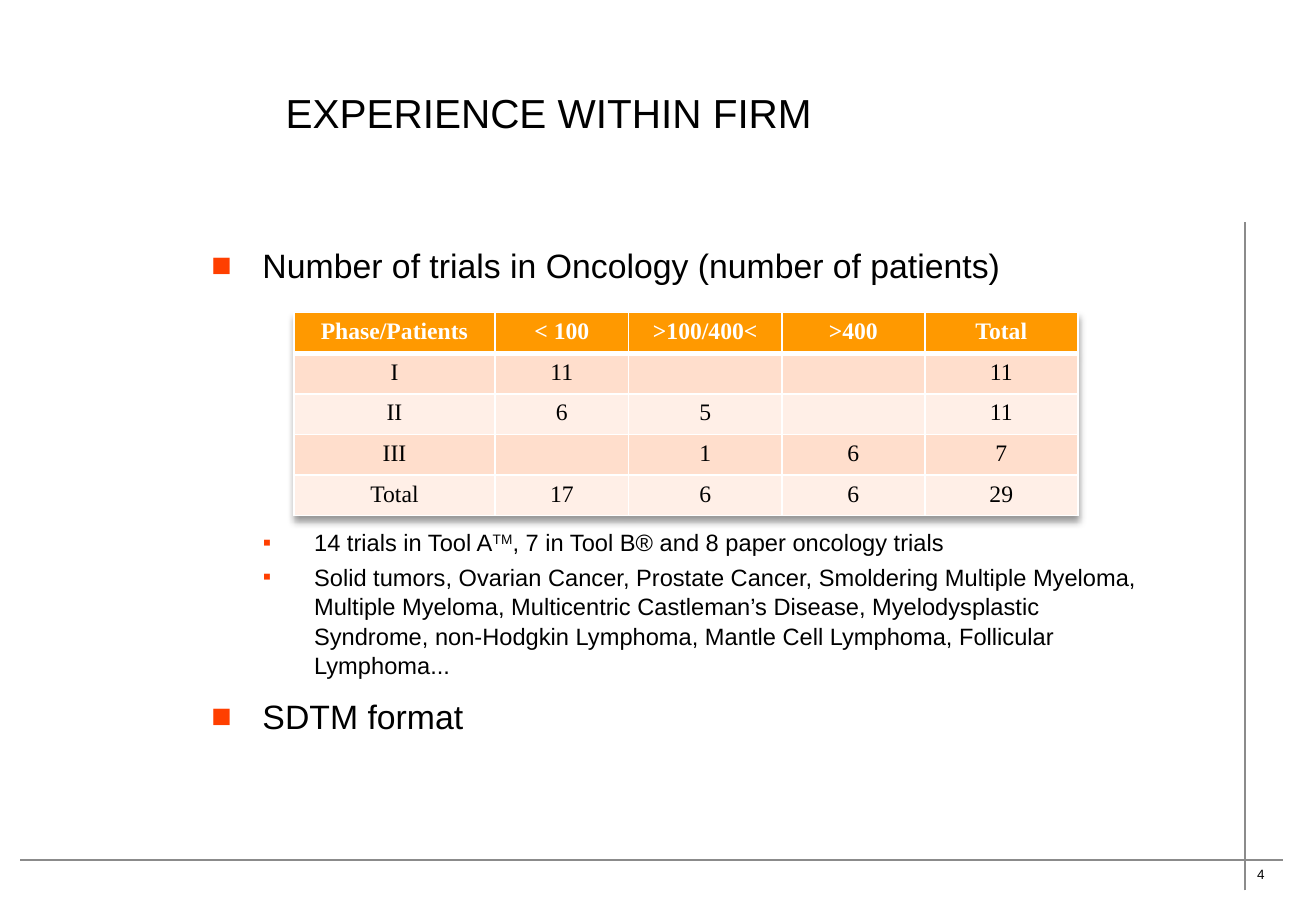
from lxml.etree import SubElement
from pptx import Presentation
from pptx.dml.color import RGBColor
from pptx.enum.shapes import MSO_CONNECTOR
from pptx.enum.text import MSO_ANCHOR, MSO_AUTO_SIZE, PP_ALIGN
from pptx.oxml.ns import qn
from pptx.util import Cm, Pt

COLORS = {
    "text": "000000",
    "white": "FFFFFF",
    "rule": "8B8B8B",
    "bullet": "FF3F00",
    "header": "FF9900",
    "odd": "FFDECC",
    "even": "FFEFE7",
}
LEVELS = [
    {"char": "■", "size": 20, "indent": 1.07, "before": 10, "spacing": 1.0},
    {"char": "▪", "size": 14, "indent": 2.15, "before": 2.8, "spacing": 1.04},
]
HANGING = 1.07
COLUMNS = [4.2, 2.8, 3.2, 2.99, 3.2]
ROW_HEIGHT = 0.8
TRIALS = [
    ["Phase/Patients", "< 100", ">100/400<", ">400", "Total"],
    ["I", "11", "", "", "11"],
    ["II", "6", "5", "", "11"],
    ["III", "", "1", "6", "7"],
    ["Total", "17", "6", "6", "29"],
]
TOPIC = [(0, [("Number of trials in Oncology (number of patients)", False)])]
DETAILS = [
    (1, [("14 trials in Tool A", False), ("TM", True),
         (", 7 in Tool B® and 8 paper oncology trials", False)]),
    (1, [("Solid tumors, Ovarian Cancer, Prostate Cancer, Smoldering Multiple "
          "Myeloma, Multiple Myeloma, Multicentric Castleman’s Disease, "
          "Myelodysplastic Syndrome, non-Hodgkin Lymphoma, Mantle Cell Lymphoma, "
          "Follicular Lymphoma...", False)]),
    (0, [("SDTM format", False)]),
]


def rgb(name):
    return RGBColor.from_string(COLORS[name])


def add_run(p, text, size, color="text", font="Arial", bold=False):
    r = p.add_run()
    r.text = text
    r.font.size = Pt(size)
    r.font.name = font
    r.font.bold = bold
    r.font.color.rgb = rgb(color)
    return r


def add_color(parent, name):
    return SubElement(parent, qn("a:srgbClr"), val=COLORS[name])


def add_title(s, text):
    sp = s.shapes.title
    sp.left, sp.top, sp.width, sp.height = Cm(5.72), Cm(1.07), Cm(19.89), Cm(2.54)
    tf = sp.text_frame
    tf.vertical_anchor = MSO_ANCHOR.MIDDLE
    tf.auto_size = MSO_AUTO_SIZE.NONE
    p = tf.paragraphs[0]
    p.alignment = PP_ALIGN.LEFT
    add_run(p, text, 24)


def add_rule(s, x1, y1, x2, y2):
    sp = s.shapes.add_connector(MSO_CONNECTOR.STRAIGHT, Cm(x1), Cm(y1), Cm(x2), Cm(y2))
    sp.line.color.rgb = rgb("rule")
    sp.line.width = Pt(1)
    SubElement(sp._element.spPr, qn("a:effectLst"))


def add_page_number(s, text):
    sp = s.shapes.add_textbox(Cm(26.04), Cm(17.98), Cm(0.86), Cm(0.58))
    add_run(sp.text_frame.paragraphs[0], text, 8)


def format_bullet(p, level):
    pPr = p._p.get_or_add_pPr()
    pPr.set("marL", str(Cm(level["indent"])))
    pPr.set("indent", str(-Cm(HANGING)))
    add_color(SubElement(pPr, qn("a:buClr")), "bullet")
    SubElement(pPr, qn("a:buFont"), typeface="Arial")
    SubElement(pPr, qn("a:buChar"), char=level["char"])


def add_bullets(s, top, height, items):
    sp = s.shapes.add_textbox(Cm(4.17), Cm(top), Cm(19.89), Cm(height))
    tf = sp.text_frame
    tf.word_wrap = True
    for i, (depth, runs) in enumerate(items):
        level = LEVELS[depth]
        p = tf.add_paragraph() if i else tf.paragraphs[0]
        p.level = depth
        format_bullet(p, level)
        p.line_spacing = level["spacing"]
        p.space_before = Pt(level["before"] if i else 0)
        for text, raised in runs:
            r = add_run(p, text, level["size"])
            if raised:
                r.font._element.set("baseline", "30000")


def set_borders(cell, top, bottom):
    tcPr = cell._tc.get_or_add_tcPr()
    for i, (side, width) in enumerate(zip("LRTB", (1, 1, top, bottom))):
        ln = SubElement(tcPr, qn(f"a:ln{side}"), w=str(Pt(width)))
        add_color(SubElement(ln, qn("a:solidFill")), "white")
        tcPr.insert(i, ln)


def add_cell(cell, text, row):
    header = row == 0
    cell.fill.solid()
    cell.fill.fore_color.rgb = rgb("header" if header else "odd" if row % 2 else "even")
    set_borders(cell, 3 if row == 1 else 1, 3 if header else 1)
    p = cell.text_frame.paragraphs[0]
    p.alignment = PP_ALIGN.CENTER
    if text:
        add_run(p, text, 14, "white" if header else "text", "Times New Roman", header)
    else:
        SubElement(p._p, qn("a:endParaRPr"), sz="1400")


def add_shadow(table):
    tblPr = table._tbl.tblPr
    effects = SubElement(tblPr, qn("a:effectLst"))
    tblPr.insert(0, effects)
    shadow = SubElement(effects, qn("a:outerShdw"), blurRad=str(Pt(4)),
                        dist=str(Pt(3)), dir="5400000", rotWithShape="0")
    SubElement(add_color(shadow, "text"), qn("a:alpha"), val="40000")


def add_trials_table(s):
    sp = s.shapes.add_table(len(TRIALS), len(COLUMNS), Cm(6.15), Cm(6.54),
                            Cm(sum(COLUMNS)), Cm(ROW_HEIGHT * len(TRIALS)))
    table = sp.table
    table.horz_banding = False
    add_shadow(table)
    for column, width in zip(table.columns, COLUMNS):
        column.width = Cm(width)
    for i, values in enumerate(TRIALS):
        table.rows[i].height = Cm(ROW_HEIGHT)
        for j, text in enumerate(values):
            add_cell(table.cell(i, j), text, i)


def main():
    prs = Presentation()
    prs.slide_width, prs.slide_height = Cm(27.52), Cm(19.05)
    s = prs.slides.add_slide(prs.slide_layouts[5])
    add_page_number(s, "4")
    add_rule(s, 0.42, 17.98, 26.82, 17.98)
    add_rule(s, 26.04, 18.62, 26.04, 4.65)
    add_title(s, "EXPERIENCE WITHIN FIRM")
    add_bullets(s, 5.0, 1.1, TOPIC)
    add_bullets(s, 10.9, 4.7, DETAILS)
    add_trials_table(s)
    prs.save("out.pptx")


if __name__ == "__main__":
    main()
